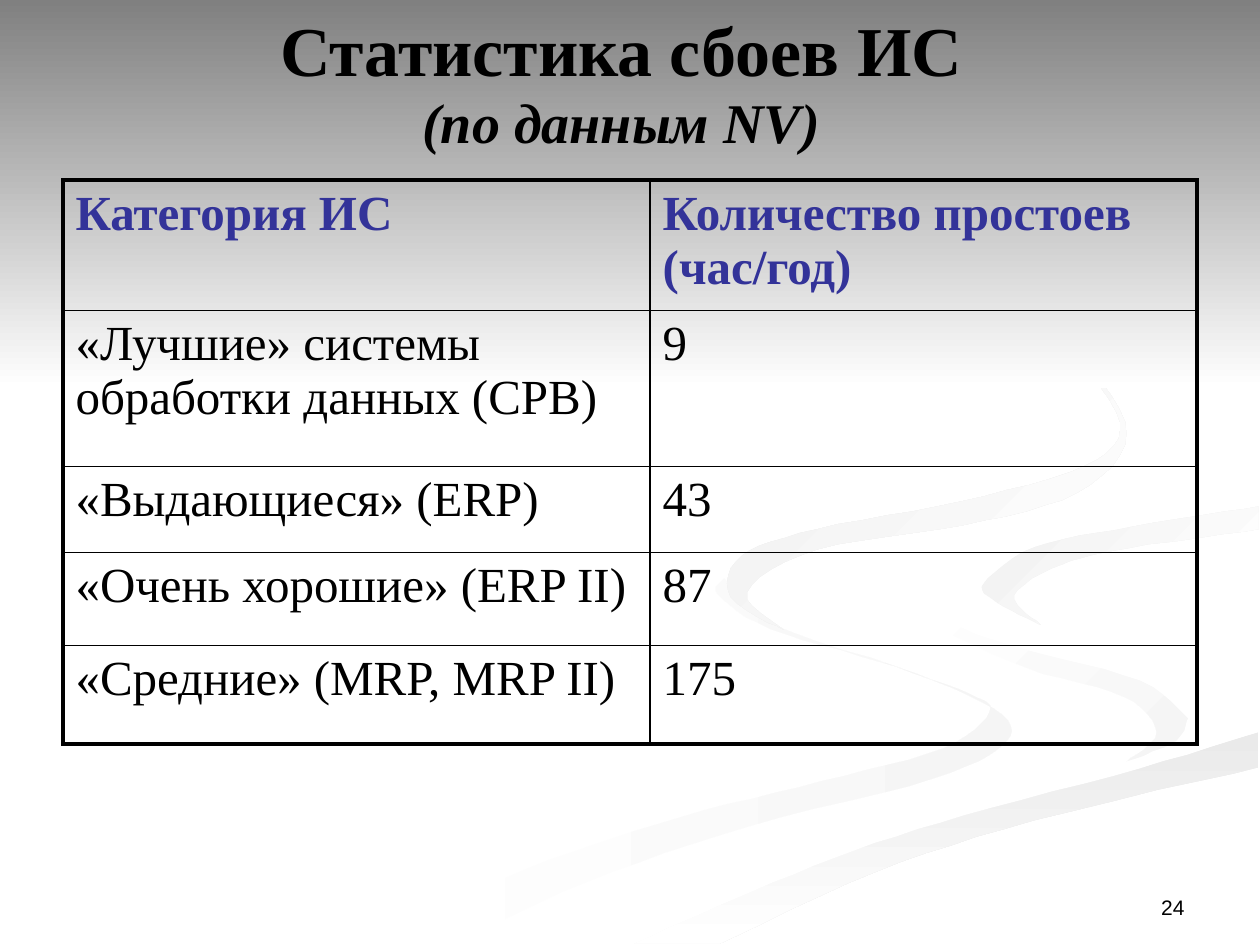
import lxml.etree
import pptx
import pptx.dml.color
import pptx.enum.text
import pptx.oxml
import pptx.oxml.ns
import pptx.util

# The slide is a grid of 1000 columns by 750 rows; every length counts cells.
COLUMNS, ROWS = 1000, 750
CELL = pptx.util.Inches(10) // COLUMNS
ALIGN = pptx.enum.text.PP_ALIGN
ANCHOR = pptx.enum.text.MSO_ANCHOR
SERIF, SANS = "Times New Roman", "Arial"
BLACK, WHITE, INDIGO = "000000", "FFFFFF", "333399"
MIST, HAZE, PEARL, SILVER, GREY = "F5F5F5", "F1F1F1", "EDEDED", "EAEAEA", "808080"
THICK, THIN = 2.25, 1
MARGIN = 50

# The backdrop is a winding stream. Neighbouring ribbons share its banks,
# so each bank is named once, by the few knots a smooth curve runs through.
BEND_TOP, BEND_END = (725, 464), (943, 570)
CURL_START, CURL_TIP = (999, 402), (826, 496)
STREAM_INLET = [(999, 387), (874, 408), (788, 422), (732, 446), BEND_TOP]
STREAM_BEND = [BEND_TOP, (745, 490), (812, 515), (905, 540), BEND_END]
STREAM_OUTLET = [BEND_END, (926, 593), (843, 618), (704, 655), (573, 703), (477, 749)]
CURL_OUTSIDE = [CURL_START, (899, 418), (822, 434), (781, 463), (791, 478), CURL_TIP]
CURL_INSIDE = [CURL_TIP, (805, 472), (843, 448), (896, 435), (999, 420)]
CURL_TO_EDGE = [CURL_TIP, (904, 519), (999, 538)]
BAND_TOP = [(999, 581), (904, 610), (765, 647), (662, 681), (570, 719), (503, 749)]
BAND_BOTTOM = [(571, 749), (695, 692), (821, 651), (999, 609)]
LOOP_TAIL = [BEND_END, (937, 586), (894, 605)]
LOOP_INSIDE = [(894, 605), (918, 581), (892, 553), (815, 530), (739, 494), BEND_TOP]
LOWER_INSIDE = [(575, 459), (570, 472), (611, 499), (697, 525), (770, 551), (785, 566),
                (749, 594), (652, 620), (539, 649), (417, 690), (300, 749)]
LOWER_OUTSIDE = [(361, 749), (466, 700), (594, 656), (740, 618), (795, 592), (795, 567),
                 (728, 535), (614, 496), (575, 459)]
UPPER_OUTSIDE = [(622, 500), (580, 474), (589, 441), (649, 420), (763, 398), (861, 370),
                 (889, 335), (846, 279), (762, 233)]
UPPER_INSIDE = [(762, 233), (854, 283), (894, 344), (855, 391), (764, 417), (649, 436),
                (593, 470), (622, 500)]
SHADE_TOP = [(0, 0), (COLUMNS, 0)]
SHADE_BOTTOM = [(COLUMNS, 308), (0, 308)]

# Banks in drawing order, first colour, last colour, clockwise gradient angle
BACKDROP = [
    ([LOWER_INSIDE, LOWER_OUTSIDE], WHITE, MIST, 0),
    ([STREAM_BEND, LOOP_TAIL, LOOP_INSIDE], WHITE, MIST, 45),
    ([BAND_TOP, BAND_BOTTOM], SILVER, WHITE, 90),
    ([STREAM_INLET, STREAM_BEND, STREAM_OUTLET, BAND_TOP[::-1],
      CURL_TO_EDGE[::-1], CURL_OUTSIDE[::-1]], WHITE, WHITE, 0),
    ([CURL_OUTSIDE, CURL_INSIDE], HAZE, WHITE, 45),
    ([UPPER_OUTSIDE, UPPER_INSIDE], PEARL, WHITE, 45),
    ([SHADE_TOP, SHADE_BOTTOM], GREY, WHITE, 90),
]

# Row height, system category, downtime
DOWNTIME = [
    (103, "Категория ИС", "Количество простоев (час/год)"),
    (124, "«Лучшие» системы обработки данных (СРВ)", "9"),
    (68, "«Выдающиеся» (ERP)", "43"),
    (74, "«Очень хорошие» (ERP II)", "87"),
    (78, "«Средние» (MRP, MRP II)", "175"),
]


def colour(hex_text):
    return pptx.dml.color.RGBColor.from_string(hex_text)


def smooth(knots, steps=6):
    """Return points of a Catmull-Rom curve that passes through the knots."""
    padded = [knots[0], *knots, knots[-1]]
    curve = [knots[0]]
    for before, start, end, after in zip(padded, padded[1:], padded[2:], padded[3:]):
        for step in range(1, steps + 1):
            t = step / steps
            curve.append(tuple(
                b + 0.5 * t * (c - a + t * (2 * a - 5 * b + 4 * c - d
                                            + t * (3 * (b - c) + d - a)))
                for a, b, c, d in zip(before, start, end, after)))
    return curve


def write(paragraph, text, size=28, font=SERIF, ink=BLACK, bold=False, italic=False):
    run = paragraph.add_run()
    run.text = text
    run.font.size = pptx.util.Pt(size)
    run.font.name = font
    run.font.color.rgb = colour(ink)
    run.font.bold = bold
    run.font.italic = italic


def set_borders(cell, **widths):
    """Draw black cell borders; widths are points keyed by side: L, R, T, B."""
    properties = cell._tc.get_or_add_tcPr()
    for position, (side, width) in enumerate(widths.items()):
        border = pptx.oxml.parse_xml(
            f'<a:ln{side} {pptx.oxml.ns.nsdecls("a")} w="{pptx.util.Pt(width)}">'
            f'<a:solidFill><a:srgbClr val="{BLACK}"/></a:solidFill></a:ln{side}>')
        properties.insert(position, border)


class Deck:
    """Holds the presentation, its grid and the current slide."""

    def __init__(self):
        self.file = pptx.Presentation()
        self.file.slide_width = COLUMNS * CELL
        self.file.slide_height = ROWS * CELL
        self.slide = self.file.slides.add_slide(self.file.slide_layouts[6])

    def ribbon(self, banks, first, last, angle):
        """Fill the area enclosed by the banks, which meet in sharp corners."""
        start, *rest = [point for bank in banks for point in smooth(bank)]
        builder = self.slide.shapes.build_freeform(*start, scale=CELL)
        builder.add_line_segments(rest, close=True)
        ribbon = builder.convert_to_shape()
        ribbon.shadow.inherit = False
        ribbon.line.fill.background()
        if first == last:
            ribbon.fill.solid()
            ribbon.fill.fore_color.rgb = colour(first)
            return
        ribbon.fill.gradient()
        ribbon.fill.gradient_angle = -angle % 360
        for position, (stop, shade) in enumerate(zip(ribbon.fill.gradient_stops, (first, last))):
            stop.color.rgb = colour(shade)
            stop.position = position

    def text(self, left, top, width, height, lines, anchor, align, spacing=1.0):
        """Place lines, each a list of (wording, format) runs, in one paragraph."""
        box = self.slide.shapes.add_textbox(*(n * CELL for n in (left, top, width, height)))
        box.text_frame.word_wrap = True
        box.text_frame.vertical_anchor = anchor
        paragraph = box.text_frame.paragraphs[0]
        paragraph.alignment = align
        paragraph.line_spacing = spacing
        for number, runs in enumerate(lines):
            if number:
                paragraph.add_line_break()
            for wording, style in runs:
                write(paragraph, wording, **style)

    def table(self, left, top, widths, records):
        """Draw records of (row height, *wordings); the first is the heading."""
        height = sum(record[0] for record in records)
        table = self.slide.shapes.add_table(
            len(records), len(widths), left * CELL, top * CELL,
            sum(widths) * CELL, height * CELL).table
        table.first_row = table.horz_banding = False
        for column, width in zip(table.columns, widths):
            column.width = width * CELL
        last_row, last_column = len(records) - 1, len(widths) - 1
        for r, (row_height, *wordings) in enumerate(records):
            table.rows[r].height = row_height * CELL
            style = {"ink": INDIGO, "bold": True} if r == 0 else {}
            for c, wording in enumerate(wordings):
                cell = table.cell(r, c)
                cell.fill.background()
                write(cell.text_frame.paragraphs[0], wording, **style)
                outer = {"L": c == 0, "R": c == last_column, "T": r == 0, "B": r == last_row}
                set_borders(cell, **{side: THICK if edge else THIN
                                     for side, edge in outer.items()})


def main():
    deck = Deck()
    for layer in BACKDROP:
        deck.ribbon(*layer)
    deck.text(717, 683, 233, 52, [[("24", {"size": 12, "font": SANS})]],
              ANCHOR.BOTTOM, ALIGN.RIGHT)
    heading = {"size": 40, "bold": True}
    source = {"size": 32, "bold": True, "italic": True}
    deck.text(MARGIN, 30, COLUMNS - 2 * MARGIN, 83,
              [[("Статистика сбоев ИС ", heading)],
               [("(по данным NV)", source), (" ", heading)]],
              ANCHOR.MIDDLE, ALIGN.CENTER, spacing=0.8)
    deck.table(MARGIN, 143, [466, 434], DOWNTIME)
    deck.file.save("out.pptx")


if __name__ == "__main__":
    main()
